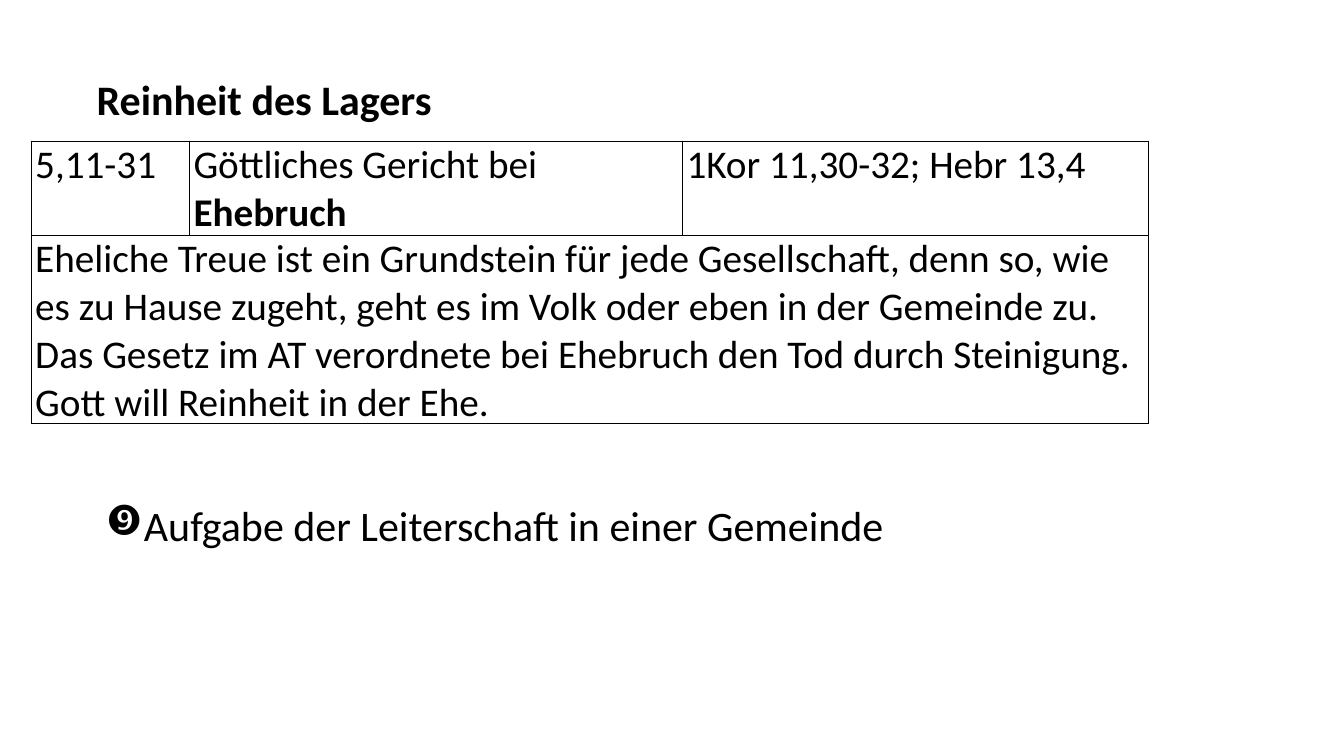
from lxml.etree import SubElement
from pptx import Presentation
from pptx.dml.color import RGBColor
from pptx.oxml.ns import qn
from pptx.util import Inches, Pt

BLACK = RGBColor(0x00, 0x00, 0x00)
WHITE = RGBColor(0xFF, 0xFF, 0xFF)
FONT = "Calibri"
HEADING_SIZE = 30
TABLE_SIZE = 28

COLUMN_WIDTHS = [1.57, 4.89, 4.62]
ROW_HEIGHTS = [0.93, 1.87]

# Each cell is a list of paragraphs, each paragraph a list of (text, bold) runs
REFERENCE_ROW = [
    [[("5,11-31", False)]],
    [[("Göttliches Gericht bei ", False), ("Ehebruch", True)]],
    [[("1Kor 11,30-32; Hebr 13,4", False)]],
]
EXPLANATION = [
    [("Eheliche Treue ist ein Grundstein für jede Gesellschaft, denn so, wie es zu Hause "
      "zugeht, geht es im Volk oder eben in der Gemeinde zu. Das Gesetz im AT verordnete "
      "bei Ehebruch den Tod durch Steinigung.", False)],
    [("Gott will Reinheit in der Ehe.", False)],
]


def add_run(paragraph, text, size, bold=False):
    run = paragraph.add_run()
    run.text = text
    run.font.color.rgb = BLACK
    for name, value in {"name": FONT, "size": Pt(size), "bold": bold}.items():
        setattr(run.font, name, value)


def add_text(slide, text, left, top, width, height, bold=False):
    box = slide.shapes.add_textbox(Inches(left), Inches(top), Inches(width), Inches(height))
    box.text_frame.word_wrap = True
    paragraph = box.text_frame.paragraphs[0]
    add_run(paragraph, text, HEADING_SIZE, bold)
    return paragraph


def add_bullet(paragraph, character, indent):
    properties = paragraph._p.get_or_add_pPr()
    properties.set("marL", str(Inches(indent)))
    properties.set("indent", str(-Inches(indent)))
    SubElement(properties, qn("a:buFont"), typeface="Wingdings")
    SubElement(properties, qn("a:buChar"), char=character)


def style_cell(cell):
    margins = {
        "margin_left": Inches(0.04),
        "margin_right": Inches(0.04),
        "margin_top": 0,
        "margin_bottom": 0,
    }
    for name, value in margins.items():
        setattr(cell, name, value)

    # Borders come before the fill in the cell properties
    properties = cell._tc.get_or_add_tcPr()
    for side in ("lnL", "lnR", "lnT", "lnB"):
        line = SubElement(properties, qn(f"a:{side}"), w=str(Pt(1)))
        fill = SubElement(line, qn("a:solidFill"))
        SubElement(fill, qn("a:srgbClr"), val=str(BLACK))
    cell.fill.solid()
    cell.fill.fore_color.rgb = WHITE


def fill_cell(cell, paragraphs):
    frame = cell.text_frame
    for index, runs in enumerate(paragraphs):
        paragraph = frame.add_paragraph() if index else frame.paragraphs[0]
        for text, bold in runs:
            add_run(paragraph, text, TABLE_SIZE, bold)


def add_scripture_table(slide, left, top):
    table = slide.shapes.add_table(
        len(ROW_HEIGHTS), len(COLUMN_WIDTHS), Inches(left), Inches(top),
        Inches(sum(COLUMN_WIDTHS)), Inches(sum(ROW_HEIGHTS)),
    ).table
    table.first_row = False
    table.horz_banding = False
    for column, width in zip(table.columns, COLUMN_WIDTHS):
        column.width = Inches(width)
    for row, height in zip(table.rows, ROW_HEIGHTS):
        row.height = Inches(height)
    for cell in table.iter_cells():
        style_cell(cell)

    for column, paragraphs in enumerate(REFERENCE_ROW):
        fill_cell(table.cell(0, column), paragraphs)
    table.cell(1, 0).merge(table.cell(1, len(COLUMN_WIDTHS) - 1))
    fill_cell(table.cell(1, 0), EXPLANATION)


def main():
    presentation = Presentation()
    presentation.slide_width = Inches(13.33)
    presentation.slide_height = Inches(7.5)
    slide = presentation.slides.add_slide(presentation.slide_layouts[6])

    # Heading
    heading = add_text(slide, "Reinheit des Lagers", 0.86, 0.65, 5.95, 0.62, bold=True)
    heading.line_spacing = 1.07

    # Bible passage with explanation
    add_scripture_table(slide, 0.31, 1.4)

    # Conclusion
    conclusion = add_text(slide, "Aufgabe der Leiterschaft in einer Gemeinde",
                          0.95, 4.91, 8.24, 0.61)
    add_bullet(conclusion, "➔", 0.38)

    presentation.save("out.pptx")


if __name__ == "__main__":
    main()
